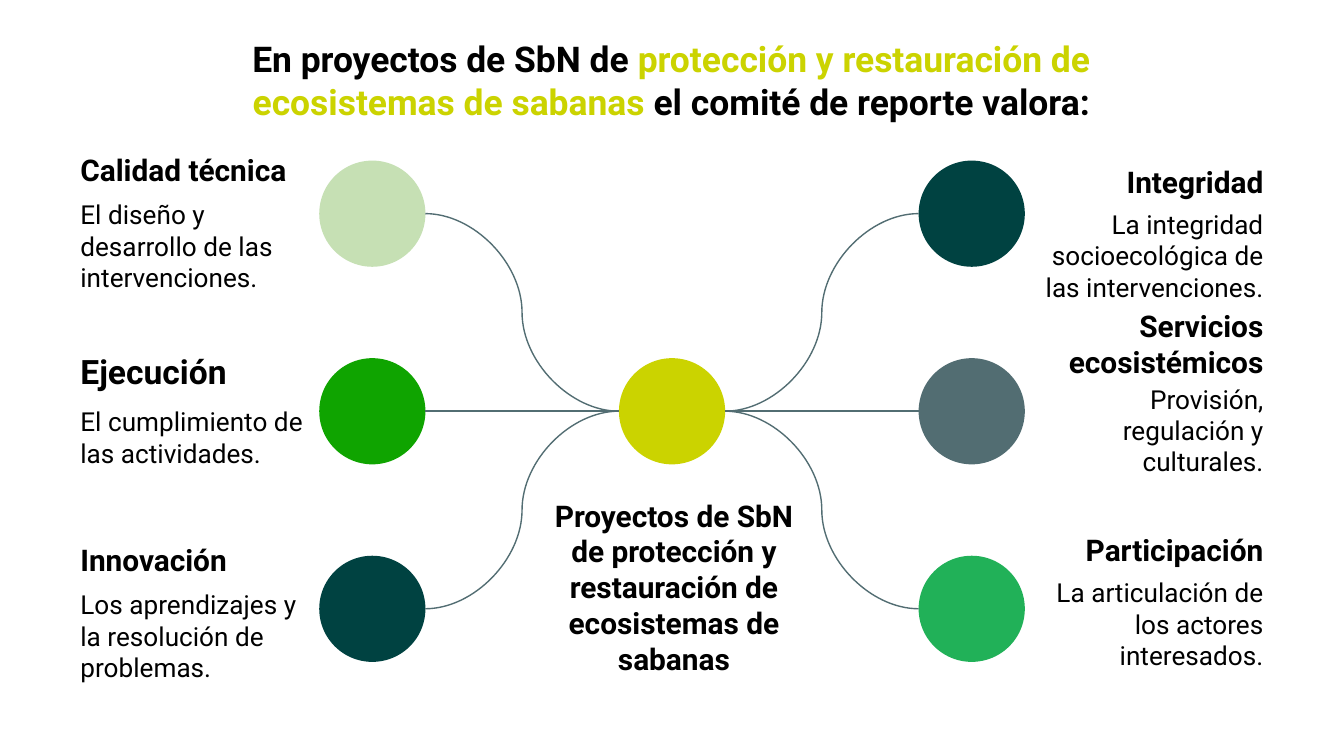
import pptx
import pptx.util
import pptx.dml.color
import pptx.enum.shapes
import pptx.enum.text
import pptx.oxml.ns
import lxml.etree

HUES = {
    "black": "000000", "lime": "CBD300", "pale": "C6E0B4", "green": "0FA400",
    "teal": "004241", "slate": "526D72", "mint": "21B158",
}
ALIGN = pptx.enum.text.PP_ALIGN
ANCHOR = pptx.enum.text.MSO_ANCHOR
inch = pptx.util.Inches

# Grid: three columns and three rows of circles around the middle
WIDE = 10
HIGH = WIDE * 9 / 16
EDGE = 0.05 * WIDE
MID_X, MID_Y = WIDE / 2, 3.06
COL, ROW = 2.23, 1.47
SIZE = 0.79
HEAD_W, BODY_W = 1.87, 1.93


def hue(name):
    return pptx.dml.color.RGBColor.from_string(HUES[name])


def write(box, *runs, size=16, bold=False, align=ALIGN.LEFT, anchor=ANCHOR.TOP):
    """Fill a shape with one paragraph; each run is a (text, colour) pair."""
    frame = box.text_frame
    frame.word_wrap = True
    frame.auto_size = pptx.enum.text.MSO_AUTO_SIZE.NONE
    frame.vertical_anchor = anchor
    frame.margin_left = frame.margin_right = inch(0.1)
    frame.margin_top = frame.margin_bottom = inch(0.1)
    para = frame.paragraphs[0]
    para.alignment = align
    para.line_spacing = 1.0
    for text, name in runs:
        run = para.add_run()
        run.text = text
        run.font.name = "Roboto"
        run.font.size = pptx.util.Pt(size)
        run.font.bold = bold
        run.font.color.rgb = hue(name)


deck = pptx.Presentation()
deck.slide_width, deck.slide_height = inch(WIDE), inch(HIGH)
slide = deck.slides.add_slide(deck.slide_layouts[5])
shapes = slide.shapes

# Title
title = shapes.title
title.left, title.top = inch(1.74), inch(0.37)
title.width, title.height = inch(6.51), inch(0.45)
write(title,
      ("En proyectos de SbN de ", "black"),
      ("protección y restauración de ecosistemas de sabanas ", "lime"),
      ("el comité de reporte valora:", "black"),
      size=19, bold=True, align=ALIGN.CENTER, anchor=ANCHOR.MIDDLE)

# Topics: side, row, colour, head, head top, head size, body, body top
topics = [
    (-1, -1, "pale", "Calidad técnica", 1.03, 16,
     "El diseño y desarrollo de las intervenciones.", 1.38),
    (-1, 0, "green", "Ejecución", 2.51, 18,
     "El cumplimiento de las actividades.", 2.92),
    (-1, 1, "teal", "Innovación", 3.93, 16,
     "Los aprendizajes y la resolución de problemas.", 4.28),
    (1, -1, "teal", "Integridad", 1.12, 16,
     "La integridad socioecológica de las intervenciones.", 1.45),
    (1, 0, "slate", "Servicios ecosistémicos", 2.19, 16,
     "Provisión, regulación y culturales.", 2.75),
    (1, 1, "mint", "Participación", 3.86, 16,
     "La articulación de los actores interesados.", 4.19),
]

# Circles: the hub, then one for each topic
spots = [(0, 0, "lime")] + [topic[:3] for topic in topics]
for side, row, name in spots:
    disc = shapes.add_shape(
        pptx.enum.shapes.MSO_SHAPE.OVAL,
        inch(MID_X + side * COL - SIZE / 2), inch(MID_Y + row * ROW - SIZE / 2),
        inch(SIZE), inch(SIZE))
    disc.shadow.inherit = False
    disc.fill.solid()
    disc.fill.fore_color.rgb = hue(name)
    disc.line.fill.background()

for side, row, name, head, head_y, head_pt, body, body_y in topics:
    # Curve from the hub to the circle
    curve = shapes.add_connector(
        pptx.enum.shapes.MSO_CONNECTOR.CURVE,
        inch(MID_X + side * SIZE / 2), inch(MID_Y),
        inch(MID_X + side * (COL - SIZE / 2)), inch(MID_Y + row * ROW))
    curve.line.color.rgb = hue("slate")
    curve.line.width = pptx.util.Pt(0.75)
    lxml.etree.SubElement(curve.element.spPr, pptx.oxml.ns.qn("a:effectLst"))

    # Head and body, aligned to the outer margin
    align = ALIGN.LEFT if side < 0 else ALIGN.RIGHT
    for text, top, width, high, size, bold in (
            (head, head_y, HEAD_W, 0.4, head_pt, True),
            (body, body_y, BODY_W, 0.74, 14, False)):
        left = EDGE if side < 0 else WIDE - EDGE - width
        box = shapes.add_textbox(inch(left), inch(top), inch(width), inch(high))
        write(box, (text, "black"), size=size, bold=bold, align=align)

# Label under the hub
label = shapes.add_textbox(inch(4.01), inch(3.6), inch(2.01), inch(0.74))
write(label,
      ("Proyectos de SbN de protección y restauración de ecosistemas de sabanas",
       "black"),
      bold=True, align=ALIGN.CENTER)

deck.save("out.pptx")
